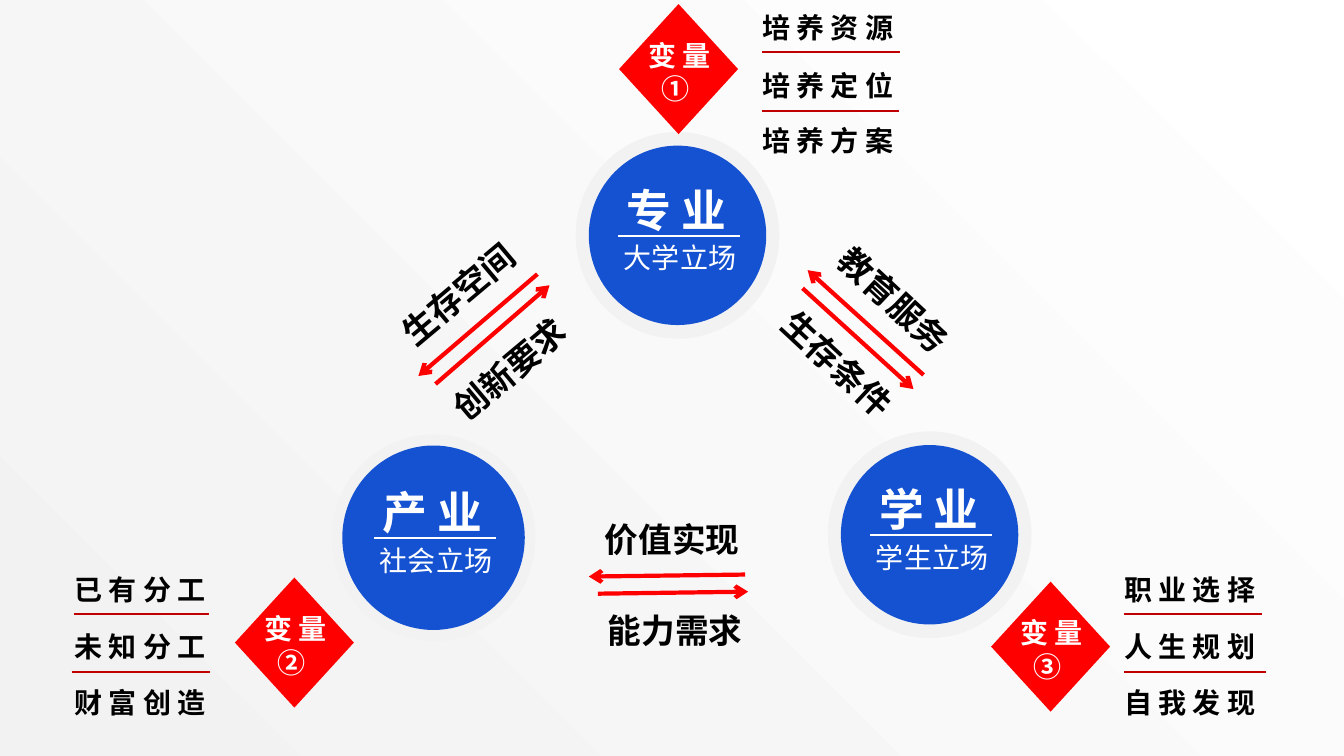
"""Build a slide on how university, industry and student positions relate."""
import pptx
import pptx.util
import pptx.dml.color
import pptx.enum.shapes
import pptx.oxml
import pptx.oxml.ns

Inches = pptx.util.Inches
RGBColor = pptx.dml.color.RGBColor
SHAPE = pptx.enum.shapes.MSO_SHAPE

FONT = "Noto Sans CJK SC"
WHITE = RGBColor(0xFF, 0xFF, 0xFF)
BLACK = RGBColor(0, 0, 0)
GREY = RGBColor(0xF2, 0xF2, 0xF2)
BLUE = RGBColor(0x15, 0x52, 0xD1)
RED = RGBColor(0xFF, 0, 0)
DARK_RED = RGBColor(0xC0, 0, 0)

HUBS = [
    ("专 业", "大学立场", 5.71, 1.31, 1.76),
    ("产 业", "社会立场", 3.29, 4.31, 1.81),
    ("学 业", "学生立场", 8.21, 4.28, 1.76),
]
VARIABLES = [("①", 6.14, 0.04), ("②", 2.33, 5.73), ("③", 9.83, 5.77)]
TOPICS = [
    (["培 养 资 源", "培 养 定 位", "培 养 方 案"], 7.46, 0.06, 2.62,
     [(7.56, 8.93), (7.56, 8.92)]),
    (["已 有 分 工", "未 知 分 工", "财 富 创 造"], 0.64, 5.63, 2.62,
     [(0.73, 2.07), (0.71, 2.08)]),
    (["职 业 选 择", "人 生 规 划", "自 我 发 现"], 11.05, 5.63, 2.15,
     [(11.15, 12.52), (11.15, 12.56)]),
]
FLOWS = [
    ("创新要求", 4.25, 3.31, 320, (4.32, 3.81), (5.45, 2.83)),
    ("生存空间", 3.74, 2.56, 320, (5.33, 2.72), (4.15, 3.73)),
    ("生存条件", 7.5, 3.47, 43, (7.96, 2.86), (9.06, 3.86)),
    ("教育服务", 8.06, 2.83, 43, (9.16, 3.72), (8.01, 2.68)),
    ("能力需求", 5.93, 6, 0, (5.93, 5.89), (7.42, 5.87)),
    ("价值实现", 5.9, 5.1, 0, (7.39, 5.7), (5.84, 5.72)),
]
TOPIC_OFFSETS = [0, 0.57, 1.12]
RULE_OFFSETS = [0.46, 1.04]


def add_shape(page, kind, left, top, width, height, color):
    shape = page.shapes.add_shape(
        kind, Inches(left), Inches(top), Inches(width), Inches(height))
    shape.shadow.inherit = False
    shape.fill.solid()
    shape.fill.fore_color.rgb = color
    shape.line.fill.background()


def add_text(page, text, left, top, width, height, size, color, bold=True):
    box = page.shapes.add_textbox(
        Inches(left), Inches(top), Inches(width), Inches(height))
    box.text_frame.word_wrap = True
    box.text_frame.text = text
    for para in box.text_frame.paragraphs:
        for span in para.runs:
            span.font.name = FONT
            span.font.size = pptx.util.Pt(size)
            span.font.bold = bold
            span.font.color.rgb = color
            east_asian = pptx.oxml.parse_xml(
                f'<a:ea {pptx.oxml.ns.nsdecls("a")} typeface="{FONT}"/>')
            span.font._element.append(east_asian)
    return box


def add_line(page, start, end, color, weight, arrow=False):
    line = page.shapes.add_connector(
        pptx.enum.shapes.MSO_CONNECTOR.STRAIGHT,
        *[Inches(value) for value in (*start, *end)])
    line.line.color.rgb = color
    line.line.width = pptx.util.Pt(weight)
    namespace = pptx.oxml.ns.nsdecls("a")
    if arrow:
        line.line._get_or_add_ln().append(
            pptx.oxml.parse_xml(f'<a:tailEnd {namespace} type="arrow"/>'))
    line._element.spPr.append(pptx.oxml.parse_xml(f"<a:effectLst {namespace}/>"))


def add_hub(page, title, position, left, top, disc):
    halo_width, halo_height = 2.02, 2.05
    disc_height = disc + 0.02
    add_shape(page, SHAPE.OVAL, left, top, halo_width, halo_height, GREY)
    add_shape(page, SHAPE.OVAL, left + (halo_width - disc) / 2,
              top + (halo_height - disc_height) / 2, disc, disc_height, BLUE)
    add_text(page, title, left + 0.41, top + 0.45, 1.27, 0.64, 32, WHITE)
    middle = top + 1.03
    add_line(page, (left + 0.42, middle), (left + 1.63, middle), WHITE, 1.5)
    add_text(page, position, left + 0.38, middle, 1.6, 0.44, 20, WHITE, False)


def add_variable(page, number, left, top):
    add_shape(page, SHAPE.DIAMOND, left, top, 1.18, 1.29, RED)
    box = add_text(page, f"变 量\n{number}", left + 0.19, top + 0.29,
                   0.85, 0.77, 20, WHITE)
    number_para = box.text_frame.paragraphs[1]
    number_para._p.get_or_add_pPr().set("marL", str(Inches(0.13)))


def add_topics(page, topics, left, top, width, rules):
    for (start, end), offset in zip(rules, RULE_OFFSETS):
        add_line(page, (start, top + offset), (end, top + offset), DARK_RED, 1.5)
    for topic, offset in zip(topics, TOPIC_OFFSETS):
        add_text(page, topic, left, top + offset, width, 0.44, 20, BLACK)


def add_flow(page, label, left, top, angle, start, end):
    add_line(page, start, end, RED, 3, arrow=True)
    box = add_text(page, label, left, top, 1.85, 0.5, 24, BLACK)
    box.rotation = angle


def main():
    deck = pptx.Presentation()
    deck.slide_width, deck.slide_height = Inches(13.33), Inches(7.5)
    page = deck.slides.add_slide(deck.slide_layouts[6])
    backdrop = page.background.fill
    backdrop.gradient()
    backdrop.gradient_angle = 225
    for stop, color in zip(backdrop.gradient_stops, (WHITE, GREY)):
        stop.color.rgb = color
    for add_part, parts in ((add_hub, HUBS), (add_variable, VARIABLES),
                            (add_topics, TOPICS), (add_flow, FLOWS)):
        for part in parts:
            add_part(page, *part)
    deck.save("out.pptx")


if __name__ == "__main__":
    main()
